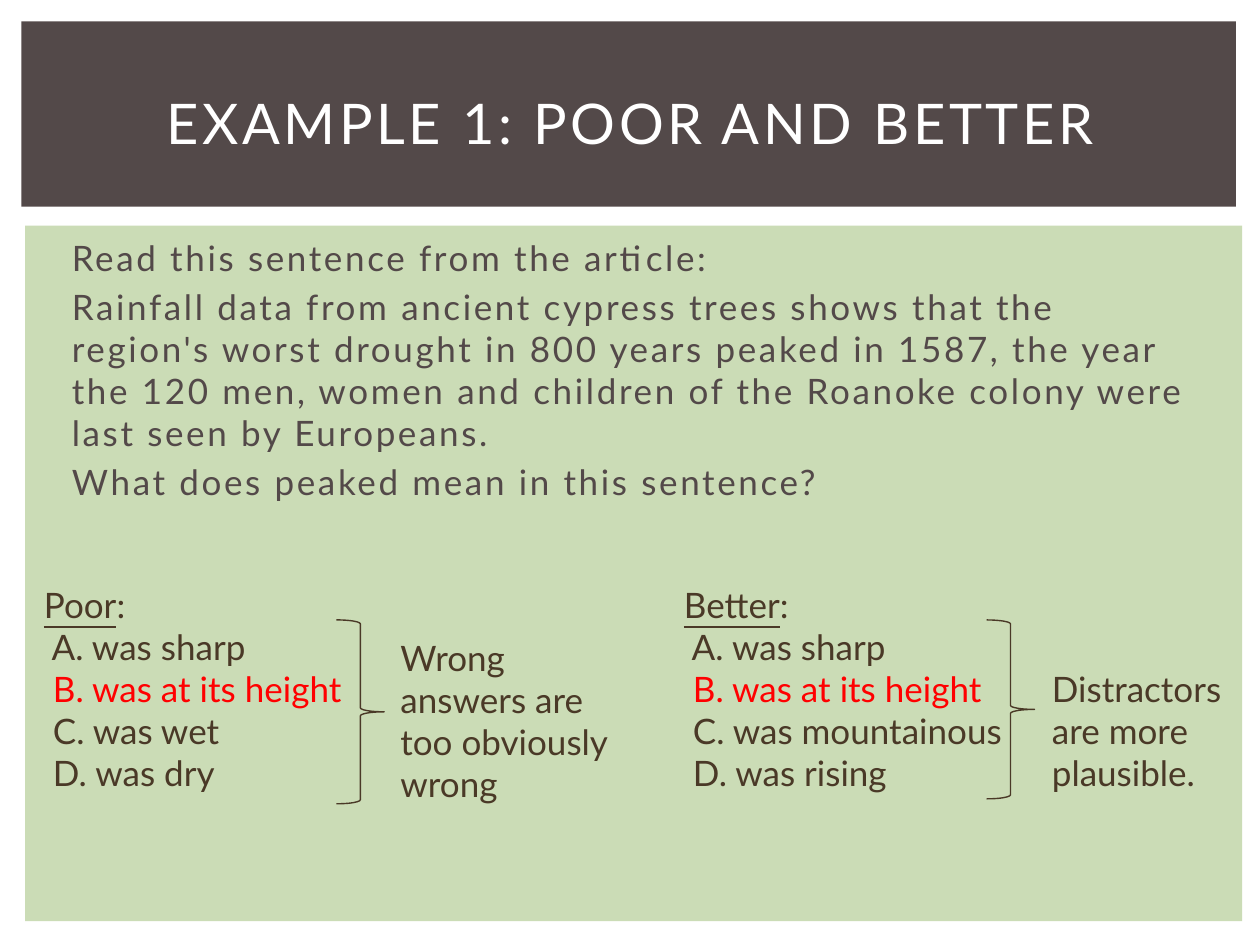
from dataclasses import dataclass

from pptx import Presentation
from pptx.dml.color import RGBColor
from pptx.enum import shapes, text
from pptx.util import Inches, Pt


@dataclass(frozen=True)
class Theme:
    font: str = "Lato"
    title_size: int = 32
    body_size: int = 20
    white: str = "FFFFFF"
    slate: str = "534949"
    green: str = "CBDCB6"
    brown: str = "4A3927"
    red: str = "FF0000"
    brace_line: float = 0.79


theme = Theme()

presentation = Presentation()
presentation.slide_width = Inches(10)
presentation.slide_height = Inches(7.5)
slide = presentation.slides.add_slide(presentation.slide_layouts[6])


def add_text(box, paragraphs, color=theme.brown, size=theme.body_size, tracking=0):
    """Add a text box; paragraphs are lists of (wording, color or None, underline)."""
    frame = slide.shapes.add_textbox(*map(Inches, box)).text_frame
    frame.word_wrap = True
    for index, runs in enumerate(paragraphs):
        paragraph = frame.add_paragraph() if index else frame.paragraphs[0]
        for wording, run_color, underline in runs:
            run = paragraph.add_run()
            run.text = wording
            run.font.name = theme.font
            run.font.size = Pt(size)
            run.font.color.rgb = RGBColor.from_string(run_color or color)
            if underline:
                run.font.underline = True
            if tracking:
                run.font._element.set("spc", str(int(tracking * 100)))
    return frame


def add_shape(kind, box, fill=None, line=None):
    shape = slide.shapes.add_shape(kind, *map(Inches, box))
    shape.shadow.inherit = False
    if fill:
        shape.fill.solid()
        shape.fill.fore_color.rgb = RGBColor.from_string(fill)
    else:
        shape.fill.background()
    if line:
        shape.line.color.rgb = RGBColor.from_string(line)
        shape.line.width = Pt(theme.brace_line)
    else:
        shape.line.fill.background()


# Background panels
add_shape(shapes.MSO_SHAPE.RECTANGLE, (0.2, 1.79, 9.66, 5.52), fill=theme.green)
add_shape(shapes.MSO_SHAPE.RECTANGLE, (0.17, 0.17, 9.64, 1.47), fill=theme.slate)

# Title
title = add_text((0.42, 0.39, 9.17, 1.15), [[("EXAMPLE 1: POOR AND BETTER", None, False)]],
                 theme.white, theme.title_size, tracking=2)
title.vertical_anchor = text.MSO_ANCHOR.MIDDLE
title.paragraphs[0].alignment = text.PP_ALIGN.CENTER

# Question
question = [
    "Read this sentence from the article:",
    "Rainfall data from ancient cypress trees shows that the region's worst drought "
    "in 800 years peaked in 1587, the year the 120 men, women and children of the "
    "Roanoke colony were last seen by Europeans.",
    "What does peaked mean in this sentence?",
]
passage = add_text((0.42, 1.83, 9.19, 5.2), [[(line, None, False)] for line in question],
                   theme.slate, tracking=1.5)
passage.margin_left = Inches(0.15)
for paragraph in passage.paragraphs:
    paragraph.space_before = Pt(theme.body_size * 0.2)

# Answer sets: heading, answers, answer box, brace box, comment, comment box
answer_sets = [
    ("Poor", ["sharp", "at its height", "wet", "dry"],
     (0.25, 4.58, 2.92, 1.78), (2.67, 4.92, 0.38, 1.46),
     "Wrong answers are too obviously wrong", (3.08, 5, 1.9, 1.45)),
    ("Better", ["sharp", "at its height", "mountainous", "rising"],
     (5.33, 4.58, 2.83, 1.78), (7.83, 4.92, 0.38, 1.42),
     "Distractors are more plausible.", (8.25, 5.25, 1.58, 1.11)),
]
for heading, answers, answer_box, brace_box, comment, comment_box in answer_sets:
    paragraphs = [[(heading, None, True), (":", None, False)]]
    for letter, answer in zip("ABCD", answers):
        color = theme.red if letter == "B" else None
        paragraphs.append([(" ", None, False), (f"{letter}. was {answer}", color, False)])
    add_text(answer_box, paragraphs)
    add_shape(shapes.MSO_SHAPE.RIGHT_BRACE, brace_box, line=theme.brown)
    add_text(comment_box, [[(comment, None, False)]])

presentation.save("out.pptx")
